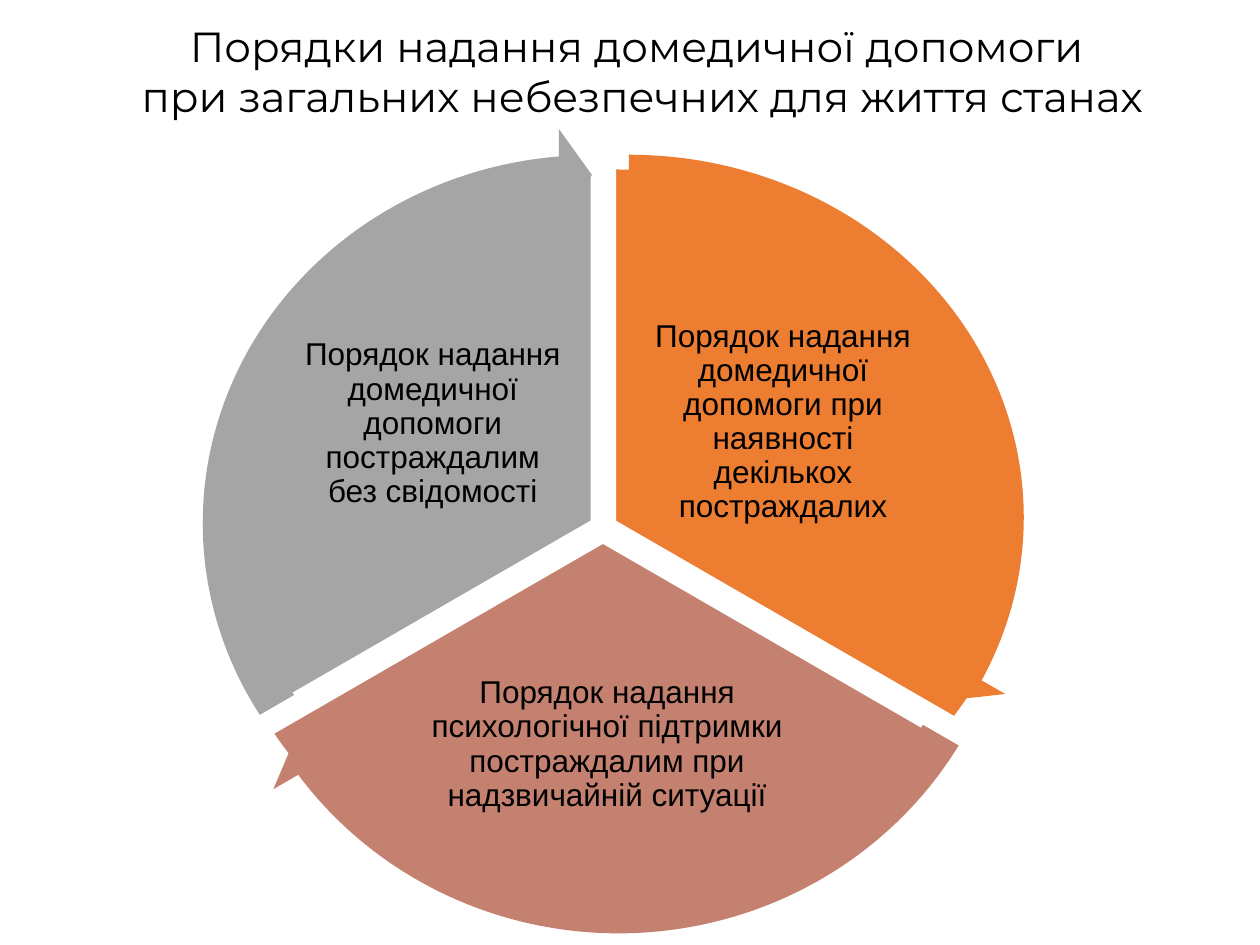
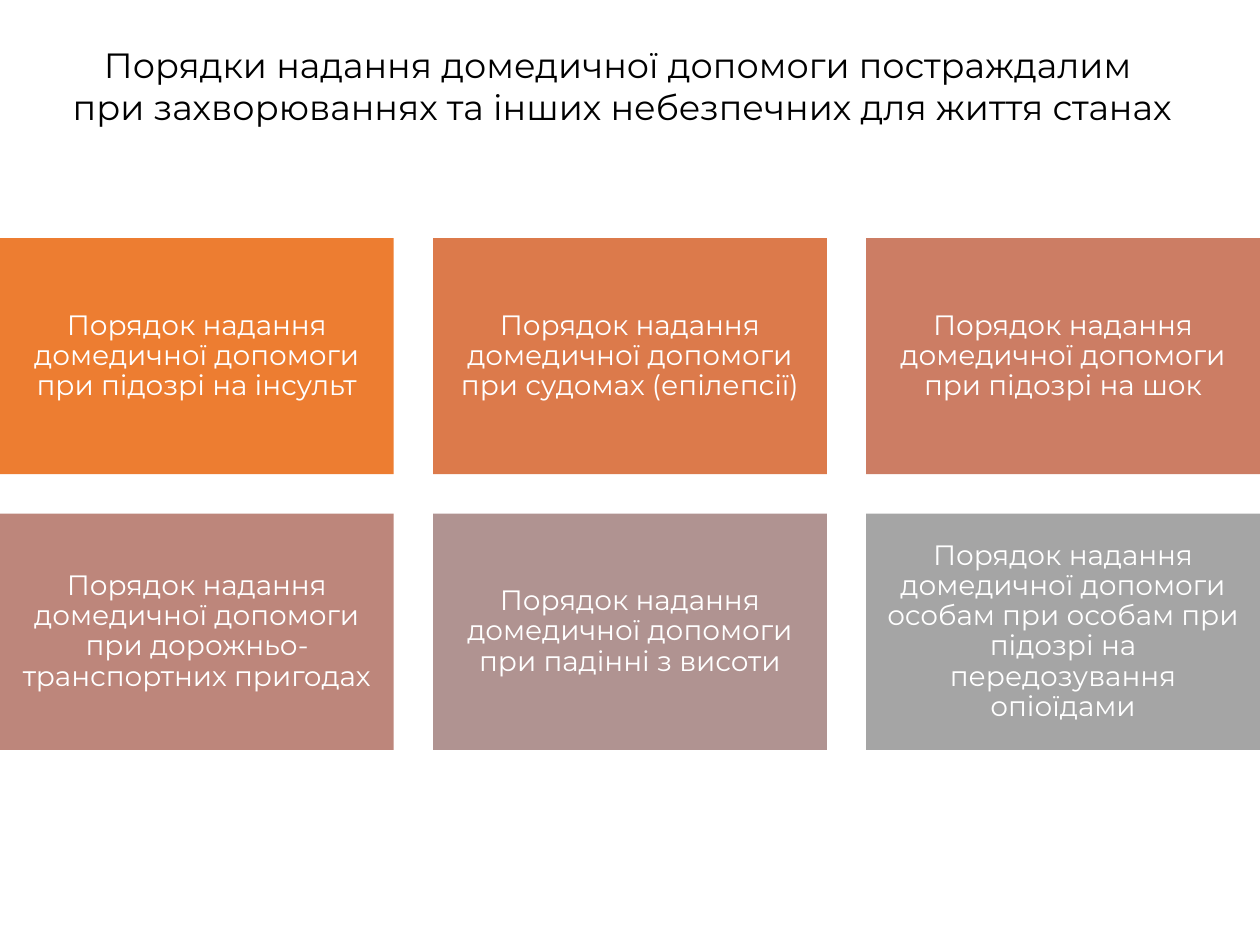
from pptx import Presentation
from pptx.dml.color import RGBColor
from pptx.enum.shapes import MSO_SHAPE
from pptx.enum.text import MSO_ANCHOR, MSO_AUTO_SIZE, PP_ALIGN
from pptx.util import Cm, Pt

PIE, ARROW, RECT = MSO_SHAPE.PIE, MSO_SHAPE.CIRCULAR_ARROW, MSO_SHAPE.RECTANGLE
MIDDLE, CENTER = MSO_ANCHOR.MIDDLE, PP_ALIGN.CENTER
GROW = MSO_AUTO_SIZE.SHAPE_TO_FIT_TEXT


class Theme:
    black, white = "000000", "FFFFFF"
    orange, rose, gray = "ED7D31", "C48170", "A5A5A5"
    tiles = [orange, "DC7A4B", "CC7D64", "BD867B", "B09391", gray]
    head, body = "Montserrat", "Arial"
    big, mid, label, small = 24, 20, 18, 16


def write(shape, text, font, size, color, inset=None, space=None):
    """Fill a shape with centred text; without an inset it grows unwrapped."""
    frame = shape.text_frame
    frame.text = text
    frame.word_wrap = inset is not None
    if inset is None:
        frame.auto_size = GROW
    else:
        frame.vertical_anchor = MIDDLE
        frame.margin_left = frame.margin_right = Cm(inset)
        frame.margin_top = frame.margin_bottom = Cm(inset)
    for para in frame.paragraphs:
        para.alignment = CENTER
        para.line_spacing = space
        for run in para.runs:
            run.font.name, run.font.size = font, Pt(size)
            run.font.color.rgb = RGBColor.from_string(color)


def draw(slide, kind, box, color, adjust=()):
    """Add a flat preset shape without an outline."""
    shape = slide.shapes.add_shape(kind, *map(Cm, box))
    shape.shadow.inherit = False
    shape.fill.solid()
    shape.fill.fore_color.rgb = RGBColor.from_string(color)
    shape.line.fill.background()
    for i, value in enumerate(adjust):
        shape.adjustments[i] = value
    return shape


deck = Presentation()
deck.slide_width, deck.slide_height = Cm(25.4), Cm(19.05)

# Slides with their titles
titles = [
    ((1.45, 0.28, 22.99, 2.31), Theme.big,
     "Порядки надання домедичної допомоги \n"
     "при загальних небезпечних для життя станах"),
    ((0, 0.76, 25.1, 1.96), Theme.mid,
     "Порядки надання домедичної допомоги постраждалим \n"
     "при захворюваннях та інших небезпечних для життя станах"),
]
slides = []
for box, size, text in titles:
    slide = deck.slides.add_slide(deck.slide_layouts[6])
    title = slide.shapes.add_textbox(*map(Cm, box))
    write(title, text, Theme.head, size, Theme.black)
    slides.append(slide)
cycle, grid = slides

# Cycle: colour, start and end angle, boxes of wedge, label and arrow, text
parts = [
    (Theme.orange, 162, 18, (4.19, 3.4, 16.43, 14.22),
     (12.85, 6.4, 5.87, 4.24), (4.17, 2.57, 17.02, 15.72),
     "Порядок надання домедичної допомоги при наявності декількох постраждалих"),
    (Theme.rose, 18, 90, (4.32, 3.68, 15.67, 14.53),
     (8.05, 13.11, 8.38, 3.81), (3.91, 2.74, 17.12, 16.66),
     "Порядок надання психологічної підтримки постраждалим при надзвичайній ситуації"),
    (Theme.gray, 90, 162, (4.19, 3.48, 15.47, 14.05),
     (5.97, 6.45, 5.51, 4.19), (3.53, 2.57, 16.81, 15.95),
     "Порядок надання домедичної допомоги постраждалим без свідомості"),
]
for color, start, end, wedge, label, _, text in parts:
    pie = draw(cycle, PIE, wedge, color, (start, end))
    pie.line.color.rgb = RGBColor.from_string(Theme.white)
    pie.line.width = Pt(1)
    note = cycle.shapes.add_textbox(*map(Cm, label))
    write(note, text, Theme.body, Theme.label, Theme.black, 0.08, 0.9)

# Arrows around the wedges; each head starts just before the end angle
tip = 3.28
for color, start, end, _, _, ring, _ in parts:
    draw(cycle, ARROW, ring, color, (0.05, tip, end - tip, start, 0.06))

# Grid of tiles: three across, gap a tenth and height six tenths of the width
cases = [
    "при підозрі на інсульт",
    "при судомах (епілепсії)",
    "при підозрі на шок",
    "при дорожньо-транспортних пригодах",
    "при падінні з висоти",
    "особам при особам при підозрі на передозування опіоїдами",
]
cols, top = 3, 4.8
wide = 25.4 / 3.2
gap, high = wide * 0.1, wide * 0.6
for i, (case, color) in enumerate(zip(cases, Theme.tiles)):
    row, col = divmod(i, cols)
    box = (col * (wide + gap), top + row * (high + gap), wide, high)
    tile = draw(grid, RECT, box, color)
    write(tile, "Порядок надання домедичної допомоги " + case,
          Theme.head, Theme.small, Theme.white, 0.18, 0.9)

deck.save("out.pptx")
